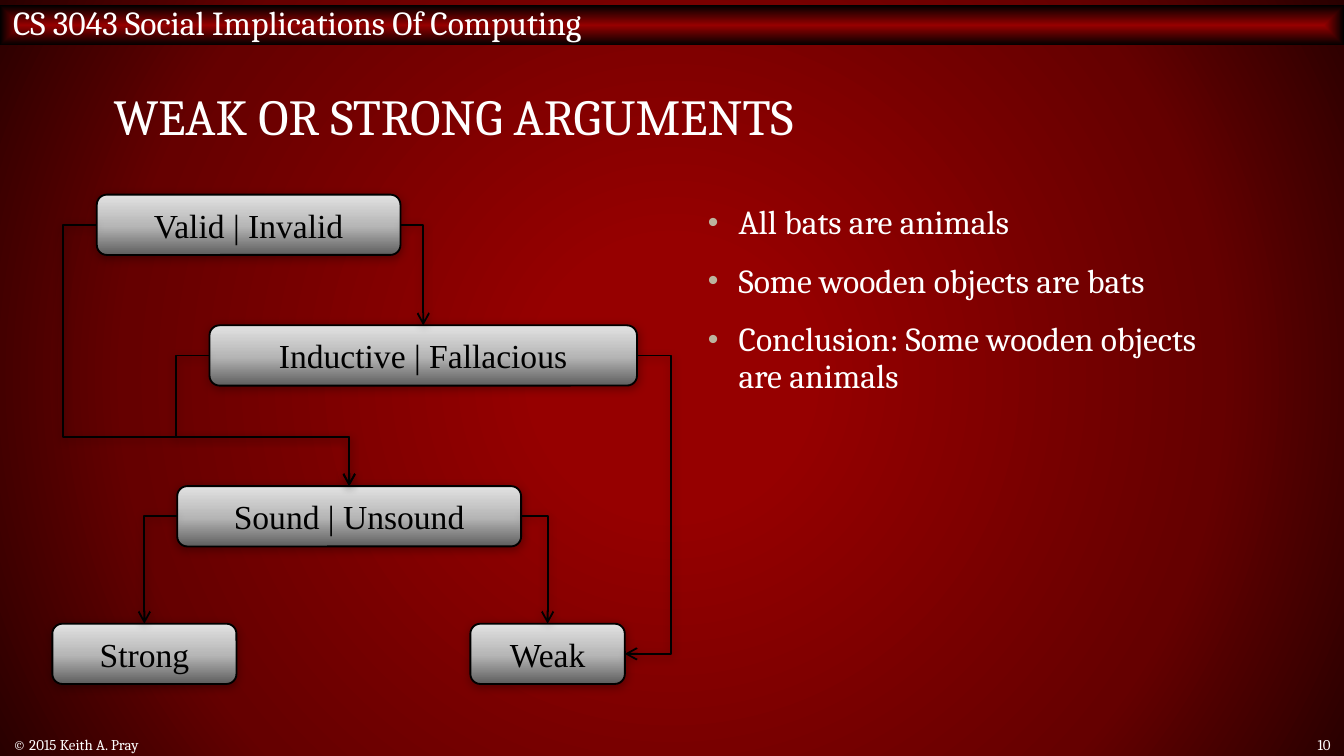
from lxml import etree
from pptx import Presentation
from pptx.dml.color import RGBColor
from pptx.enum.shapes import MSO_CONNECTOR, MSO_SHAPE
from pptx.enum.text import MSO_ANCHOR as ANCHOR, PP_ALIGN as ALIGN
from pptx.oxml import parse_xml
from pptx.oxml.ns import nsdecls, qn
from pptx.util import Cm, Pt

COLORS = {
    "text": "FFFFFF", "ink": "000000", "bullet": "BCB49E",
    "red": "960000", "dark_red": "650000", "deep_red": "290000",
    "grey": "5E5E5E", "mid_grey": "B6B6B6", "light_grey": "E2E2E2",
}
SERIF, NODE_FONT = "Cambria", "Times New Roman"
TOP, LEFT, RIGHT = 0, 1, 3
NODE_HEIGHT = 1.14
LANE_GAP = 0.64     # distance of a side lane from its node
MERGE_Y = 8.26      # height where the lanes into "Sound" meet

RADIAL = ('<a:path path="{}"><a:fillToRect l="50000" t="50000" '
          'r="50000" b="50000"/></a:path>')
UPWARD = '<a:lin ang="16200000" scaled="0"/>'

NODES = {  # left, top, width
    "Valid | Invalid": (1.83, 3.68, 5.74),
    "Inductive | Fallacious": (3.96, 6.15, 8.08),
    "Sound | Unsound": (3.35, 9.19, 6.5),
    "Weak": (8.89, 11.79, 2.92),
    "Strong": (0.99, 11.79, 3.48),
}
ROUTES = [  # start node, side, end node, side, bends, merge height
    ("Valid | Invalid", LEFT, "Sound | Unsound", TOP, 4),
    ("Inductive | Fallacious", RIGHT, "Weak", RIGHT, 3),
    ("Sound | Unsound", RIGHT, "Weak", TOP, 2),
    ("Sound | Unsound", LEFT, "Strong", TOP, 2),
    ("Inductive | Fallacious", LEFT, "Sound | Unsound", TOP, 4),
    ("Valid | Invalid", RIGHT, "Inductive | Fallacious", TOP, 2),
]
POINTS = ["All bats are animals", "Some wooden objects are bats",
          "Conclusion: Some wooden objects are animals"]


def rgb(name):
    return RGBColor.from_string(COLORS[name])


def set_gradient(fill, parent, stops, direction):
    """Put a gradient of (percent, colour) stops in place of the fill."""
    fill.solid()
    stop_xml = "".join(
        f'<a:gs pos="{pos * 1000}"><a:srgbClr val="{COLORS[c]}"/></a:gs>'
        for pos, c in stops)
    grad = parse_xml(f'<a:gradFill {nsdecls("a")} rotWithShape="1">'
                     f'<a:gsLst>{stop_xml}</a:gsLst>{direction}</a:gradFill>')
    parent.replace(parent.find(qn("a:solidFill")), grad)


def add_soft_shadow(spPr):
    old = spPr.find(qn("a:effectLst"))
    if old is not None:
        spPr.remove(old)
    spPr.append(parse_xml(
        f'<a:effectLst {nsdecls("a")}><a:outerShdw blurRad="{Pt(5)}" '
        f'dist="{Pt(1)}" dir="5400000" rotWithShape="0">'
        f'<a:srgbClr val="{COLORS["ink"]}"><a:alpha val="32000"/></a:srgbClr>'
        '</a:outerShdw></a:effectLst>'))


def write(p, text, size, font=SERIF, color="text", **paragraph_format):
    for name, value in paragraph_format.items():
        setattr(p, name, value)
    r = p.add_run()
    r.text = text
    for name, value in {"size": Pt(size), "name": font}.items():
        setattr(r.font, name, value)
    r.font.color.rgb = rgb(color)


def add_text(s, box, anchor=ANCHOR.MIDDLE):
    tf = s.shapes.add_textbox(*map(Cm, box)).text_frame
    tf.word_wrap = True
    tf.vertical_anchor = anchor
    return tf


def add_header(s, text):
    sp = s.shapes.add_shape(MSO_SHAPE.RECTANGLE, 0, Cm(0.1), Cm(25.4), Cm(0.76))
    sp.shadow.inherit = False
    sp.line.fill.background()
    set_gradient(sp.fill, sp._element.spPr, [(0, "red"), (100, "ink")],
                 RADIAL.format("shape"))
    tf = sp.text_frame
    frame_format = {"margin_top": 0, "margin_bottom": Cm(0.13),
                    "vertical_anchor": ANCHOR.MIDDLE, "word_wrap": True}
    for name, value in frame_format.items():
        setattr(tf, name, value)
    write(tf.paragraphs[0], text, 18, alignment=ALIGN.LEFT)


def add_bullets(s, box, points):
    tf = add_text(s, box, ANCHOR.TOP)
    for i, text in enumerate(points):
        p = tf.add_paragraph() if i else tf.paragraphs[0]
        write(p, text, 18, line_spacing=0.9, space_before=Pt(12 if i else 0))
        pPr = p._p.get_or_add_pPr()
        pPr.set("marL", str(Cm(0.58)))
        pPr.set("indent", str(-Cm(0.58)))
        color = etree.SubElement(pPr, qn("a:buClr"))
        etree.SubElement(color, qn("a:srgbClr"), val=COLORS["bullet"])
        etree.SubElement(pPr, qn("a:buSzPct"), val="90000")
        etree.SubElement(pPr, qn("a:buFont"), typeface="Arial")
        etree.SubElement(pPr, qn("a:buChar"), char="•")


def add_node(s, text, left, top, width):
    sp = s.shapes.add_shape(MSO_SHAPE.ROUNDED_RECTANGLE, Cm(left), Cm(top),
                            Cm(width), Cm(NODE_HEIGHT))
    set_gradient(sp.fill, sp._element.spPr,
                 [(0, "grey"), (48, "mid_grey"), (100, "light_grey")], UPWARD)
    sp.line.color.rgb = rgb("ink")
    sp.line.width = Pt(1)
    add_soft_shadow(sp._element.spPr)
    tf = sp.text_frame
    tf.word_wrap = False
    tf.vertical_anchor = ANCHOR.MIDDLE
    write(tf.paragraphs[0], text, 18, NODE_FONT, "ink", alignment=ALIGN.CENTER)
    return sp


def add_route(s, start, start_side, end, end_side, bends):
    """Join two nodes by an arrow that leaves sideways, along a side lane."""
    line = s.shapes.add_connector(MSO_CONNECTOR.ELBOW, 0, 0, 0, 0)
    line.begin_connect(start, start_side)
    line.end_connect(end, end_side)
    line.line.color.rgb = rgb("ink")
    line.line.width = Pt(1)
    spPr = line._element.spPr
    etree.SubElement(spPr.find(qn("a:ln")), qn("a:tailEnd"), type="arrow")
    add_soft_shadow(spPr)

    geom = spPr.find(qn("a:prstGeom"))
    geom.set("prst", f"bentConnector{bends}")
    gap = Cm(LANE_GAP) * (1 if start_side == RIGHT else -1)
    ratios = [gap / (line.end_x - line.begin_x),
              (Cm(MERGE_Y) - line.begin_y) / (line.end_y - line.begin_y)]
    guides = geom.get_or_add_avLst() if hasattr(geom, "get_or_add_avLst") \
        else geom.find(qn("a:avLst"))
    for i, ratio in enumerate(ratios[:bends - 2], 1):
        etree.SubElement(guides, qn("a:gd"), name=f"adj{i}",
                         fmla=f"val {round(ratio * 100000)}")


def main():
    prs = Presentation()
    prs.slide_width, prs.slide_height = Cm(25.4), Cm(14.29)
    s = prs.slides.add_slide(prs.slide_layouts[6])
    fill = s.background.fill
    fill.solid()
    set_gradient(fill, s._element.cSld.bg.bgPr,
                 [(17, "red"), (71, "dark_red"), (100, "deep_red")],
                 RADIAL.format("circle"))

    add_header(s, "CS 3043 Social Implications Of Computing")
    title = add_text(s, (1.9, 1.02, 21.59, 2.54))
    write(title.paragraphs[0], "WEAK OR STRONG ARGUMENTS", 27, line_spacing=0.8)
    add_bullets(s, (13.13, 3.76, 10.36, 9.32), POINTS)
    footer = add_text(s, (0, 13.87, 15.44, 0.41))
    write(footer.paragraphs[0], "© 2015 Keith A. Pray", 8)
    number = add_text(s, (23.67, 13.87, 1.73, 0.41))
    write(number.paragraphs[0], "10", 8, alignment=ALIGN.RIGHT)

    nodes = {text: add_node(s, text, *box) for text, box in NODES.items()}
    for start, start_side, end, end_side, bends in ROUTES:
        add_route(s, nodes[start], start_side, nodes[end], end_side, bends)
    prs.save("out.pptx")


if __name__ == "__main__":
    main()
